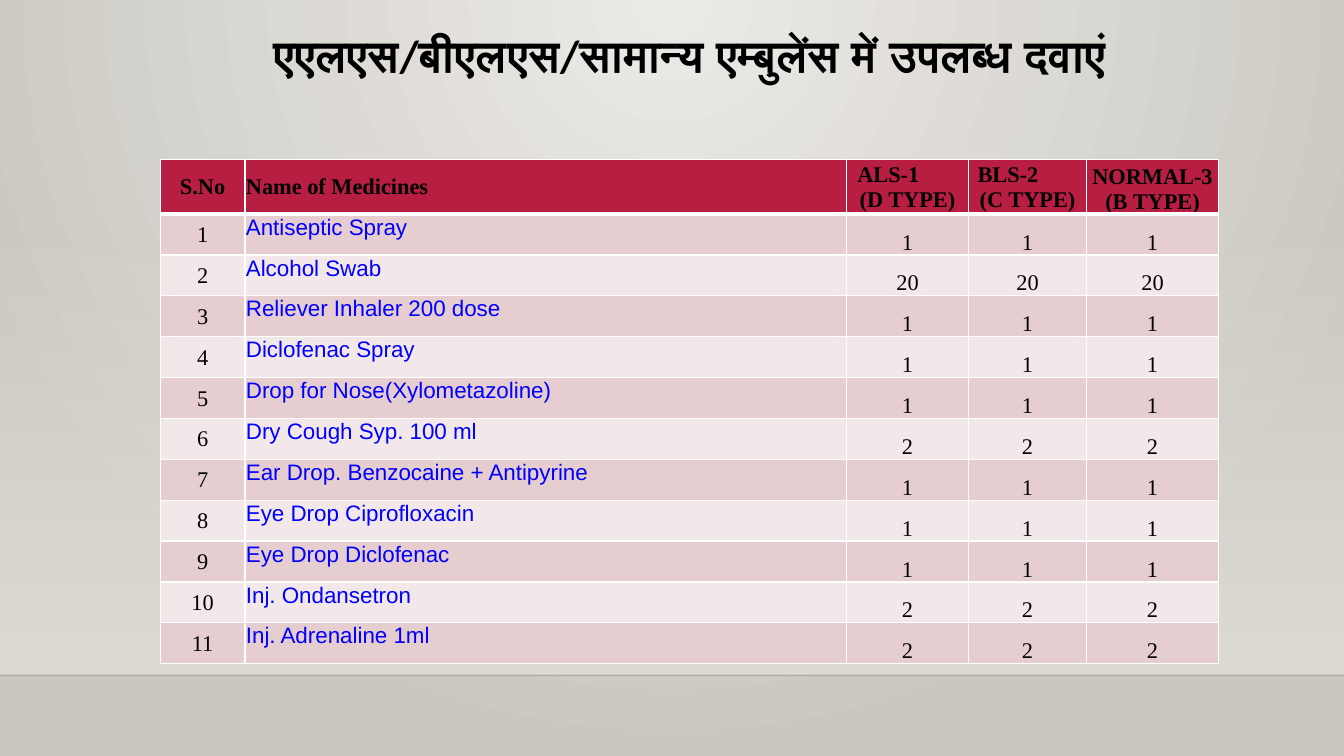
from dataclasses import dataclass

from lxml import etree
from pptx import Presentation
from pptx.dml.color import RGBColor
from pptx.enum.shapes import MSO_CONNECTOR, MSO_SHAPE
from pptx.enum.text import MSO_ANCHOR, PP_ALIGN
from pptx.oxml import parse_xml
from pptx.oxml.ns import nsdecls, qn
from pptx.slide import Slide
from pptx.table import _Cell
from pptx.util import Pt

RECT = MSO_SHAPE.RECTANGLE
LINE = MSO_CONNECTOR.STRAIGHT
LEFT, MID = PP_ALIGN.LEFT, PP_ALIGN.CENTER
TOP, CENTRE, LOW = MSO_ANCHOR.TOP, MSO_ANCHOR.MIDDLE, MSO_ANCHOR.BOTTOM

BLACK = RGBColor(0x00, 0x00, 0x00)
WHITE = RGBColor(0xFF, 0xFF, 0xFF)
BLUE = RGBColor(0x00, 0x00, 0xFF)
RED = RGBColor(0xB7, 0x1E, 0x42)
ROSE = RGBColor(0xE6, 0xCD, 0xCF)
PALE = RGBColor(0xF3, 0xE8, 0xE9)
LIGHT = RGBColor(0xEC, 0xEA, 0xE7)
DARK = RGBColor(0xCA, 0xC7, 0xC1)
WALL = RGBColor(0xDF, 0xDB, 0xD5)

SERIF, SANS, HEAD = "Times New Roman", "Arial", "Calibri"
WIDE, HIGH = 960, 540
FLOOR = 482.4  # height of the floor line
TITLE = "एएलएस/बीएलएस/सामान्य एम्बुलेंस में उपलब्ध दवाएं"


@dataclass
class Column:
    """One table column: its heading and the look of its body cells."""
    head: str
    width: float
    align: PP_ALIGN = MID
    top: MSO_ANCHOR = CENTRE
    body: MSO_ANCHOR = LOW
    font: str = SERIF
    color: RGBColor = BLACK
    shift: float = 0  # left indent of the first heading line


@dataclass
class Drug:
    """One medicine and the count carried in every ambulance type."""
    name: str
    count: int


COLUMNS = [
    Column("S.No", 60.5, body=CENTRE),
    Column("Name of Medicines", 429.7, LEFT, body=TOP, font=SANS, color=BLUE),
    Column("ALS-1\n(D TYPE)", 87.2, shift=7),
    Column("BLS-2\n(C TYPE)", 84.3, shift=5.7),
    Column("NORMAL-3\n(B TYPE)", 94.3, top=LOW),
]
DRUGS = [
    Drug("Antiseptic Spray", 1),
    Drug("Alcohol Swab", 20),
    Drug("Reliever Inhaler 200 dose", 1),
    Drug("Diclofenac Spray", 1),
    Drug("Drop for Nose(Xylometazoline)", 1),
    Drug("Dry Cough Syp. 100 ml", 2),
    Drug("Ear Drop. Benzocaine + Antipyrine", 1),
    Drug("Eye Drop Ciprofloxacin", 1),
    Drug("Eye Drop Diclofenac", 1),
    Drug("Inj. Ondansetron", 2),
    Drug("Inj. Adrenaline 1ml", 2),
]


def blend(first: RGBColor, last: RGBColor, alpha: int, way: str) -> str:
    """Gradient XML; alpha is the opacity of the first stop in percent."""
    return (
        f'<a:gradFill {nsdecls("a")} rotWithShape="1"><a:gsLst>'
        f'<a:gs pos="0"><a:srgbClr val="{first}">'
        f'<a:alpha val="{alpha * 1000}"/></a:srgbClr></a:gs>'
        f'<a:gs pos="100000"><a:srgbClr val="{last}"/></a:gs>'
        f'</a:gsLst>{way}</a:gradFill>'
    )


def draw_back(slide: Slide) -> None:
    # Radial glow from the top centre
    glow = ('<a:path path="circle"><a:fillToRect l="43000" t="0" '
            'r="43000" b="100000"/></a:path>')
    back = parse_xml(
        f'<p:bg {nsdecls("p", "a")}><p:bgPr>{blend(LIGHT, DARK, 100, glow)}'
        '<a:effectLst/></p:bgPr></p:bg>')
    slide.element.cSld.insert(0, back)

    # Wall that fades in towards the floor
    wall = slide.shapes.add_shape(RECT, 0, Pt(159.1), Pt(WIDE), Pt(FLOOR - 159.1))
    wall.shadow.inherit = False
    wall.line.fill.background()
    fade = blend(WALL, WALL, 0, '<a:lin ang="5400000" scaled="0"/>')
    wall.element.spPr.find(qn("a:prstGeom")).addnext(parse_xml(fade))

    # Floor line
    edge = slide.shapes.add_connector(LINE, 0, Pt(FLOOR), Pt(WIDE), Pt(FLOOR))
    edge.line.width = Pt(1)
    edge.line.color.rgb = BLACK
    tint = edge.element.spPr.find(".//" + qn("a:srgbClr"))
    etree.SubElement(tint, qn("a:alpha")).set("val", "20000")
    etree.SubElement(edge.element.spPr, qn("a:effectLst"))


def draw_title(slide: Slide) -> None:
    box = slide.shapes.add_textbox(Pt(114.5), Pt(20.9), Pt(756), Pt(82.8))
    frame = box.text_frame
    frame.word_wrap = True
    frame.vertical_anchor = TOP
    frame.text = TITLE
    para = frame.paragraphs[0]
    para.alignment = MID
    para.line_spacing = 0.9
    font = para.runs[0].font
    font.name, font.size, font.bold = HEAD, Pt(32), True
    font.color.rgb = BLACK


def set_edge(cell: _Cell, side: str, width: float) -> None:
    props = cell._tc.get_or_add_tcPr()
    edge = etree.SubElement(props, qn(f"a:{side}"), w=str(Pt(width)))
    paint = etree.SubElement(edge, qn("a:solidFill"))
    etree.SubElement(paint, qn("a:srgbClr"), val=str(WHITE))


def set_cell(cell: _Cell, text: str, col: Column, row: int) -> None:
    head = row == 0
    cell.margin_left = cell.margin_right = cell.margin_top = Pt(0.7)
    cell.margin_bottom = 0
    cell.vertical_anchor = col.top if head else col.body
    cell.text_frame.text = text
    for para in cell.text_frame.paragraphs:
        para.alignment = col.align
        font = para.runs[0].font
        font.name = SERIF if head else col.font
        font.size, font.bold = Pt(16), head
        font.color.rgb = BLACK if head else col.color
    if head and col.shift:
        first = cell.text_frame.paragraphs[0]
        first.alignment = LEFT
        first._p.get_or_add_pPr().set("marL", str(Pt(col.shift)))

    # Borders come before the fill
    set_edge(cell, "lnL", 1)
    set_edge(cell, "lnR", 1)
    set_edge(cell, "lnT", 3 if row == 1 else 1)
    set_edge(cell, "lnB", 3 if head else 1)
    cell.fill.solid()
    cell.fill.fore_color.rgb = RED if head else (PALE, ROSE)[row % 2]


def draw_table(slide: Slide) -> None:
    top, step = 35.7, 29.2
    rows = [[col.head for col in COLUMNS]]
    for num, drug in enumerate(DRUGS, 1):
        rows.append([str(num), drug.name] + [str(drug.count)] * 3)
    grid = slide.shapes.add_table(
        len(rows), len(COLUMNS), Pt(114.5), Pt(113.8),
        Pt(756), Pt(top + step * len(DRUGS))).table
    for col, part in zip(COLUMNS, grid.columns):
        part.width = Pt(col.width)
    for row, texts in enumerate(rows):
        grid.rows[row].height = Pt(step if row else top)
        for spot, (text, col) in enumerate(zip(texts, COLUMNS)):
            set_cell(grid.cell(row, spot), text, col, row)


def main() -> None:
    deck = Presentation()
    deck.slide_width, deck.slide_height = Pt(WIDE), Pt(HIGH)
    slide = deck.slides.add_slide(deck.slide_layouts[6])
    draw_back(slide)
    draw_title(slide)
    draw_table(slide)
    deck.save("out.pptx")


if __name__ == "__main__":
    main()
